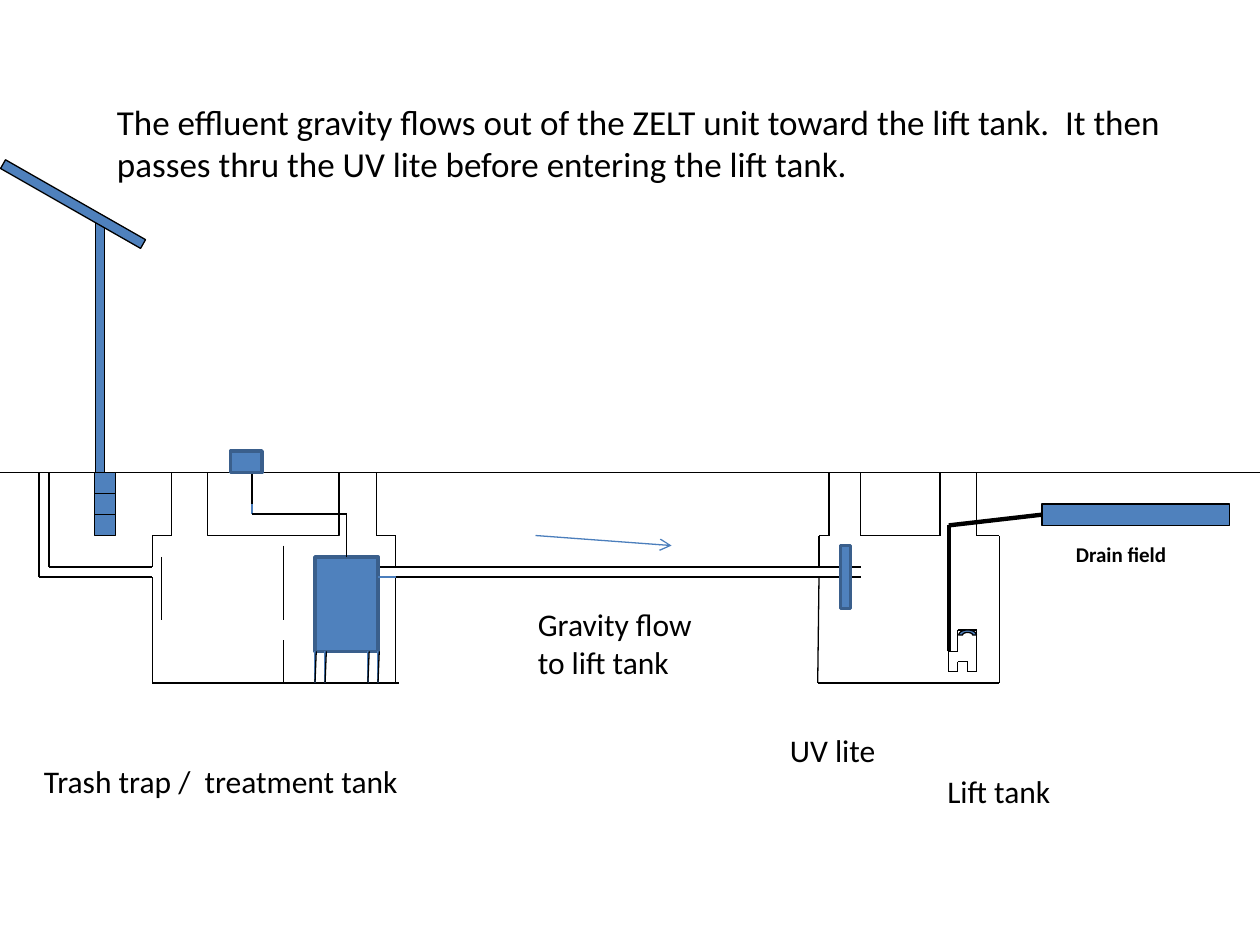
from collections import namedtuple
from dataclasses import dataclass
from itertools import pairwise
from math import cos, pi, sin

from lxml.etree import SubElement
from pptx import Presentation
from pptx.dml.color import RGBColor
from pptx.enum.shapes import MSO_CONNECTOR, MSO_SHAPE
from pptx.enum.text import MSO_AUTO_SIZE
from pptx.oxml.ns import qn
from pptx.util import Inches, Pt

Box = namedtuple("Box", "x y w h")


@dataclass(frozen=True)
class Theme:
    black: RGBColor = RGBColor(0x00, 0x00, 0x00)
    blue: RGBColor = RGBColor(0x4F, 0x81, 0xBD)
    edge: RGBColor = RGBColor(0x3A, 0x5F, 0x8C)
    flow: RGBColor = RGBColor(0x4B, 0x7E, 0xBC)
    font: str = "Calibri"
    title: int = 20
    label: int = 18
    small: int = 12
    thin: float = 0.75
    outline: float = 2
    hose: float = 2.5


T = Theme()
GROUND = 3.75
# Depths below ground shared by both tanks
SHOULDER, PIPE_TOP, PIPE_BOTTOM, FLOOR = 0.5, 0.75, 0.83, 1.67


def add_text(s, box, *lines, size=T.label, bold=False, wrap=True):
    tb = s.shapes.add_textbox(*map(Inches, box))
    tf = tb.text_frame
    tf.word_wrap = wrap
    tf.auto_size = MSO_AUTO_SIZE.SHAPE_TO_FIT_TEXT
    for i, line in enumerate(lines):
        p = tf.paragraphs[0] if i == 0 else tf.add_paragraph()
        r = p.add_run()
        r.text = line
        r.font.name, r.font.size, r.font.bold = T.font, Pt(size), bold
        r.font.color.rgb = T.black


def style(sp, fill, line, width):
    sp.shadow.inherit = False
    if fill is None:
        sp.fill.background()
    else:
        sp.fill.solid()
        sp.fill.fore_color.rgb = fill
    sp.line.color.rgb = line
    sp.line.width = Pt(width)


def add_rect(s, box, fill=T.blue, line=T.black, width=T.thin):
    sp = s.shapes.add_shape(MSO_SHAPE.RECTANGLE, *map(Inches, box))
    style(sp, fill, line, width)
    return sp


def add_route(s, box, *points, color=T.black, width=T.thin, arrow=False):
    """Join points, given from the box's corner, and return the last connector."""
    for (x1, y1), (x2, y2) in pairwise(points):
        c = s.shapes.add_connector(
            MSO_CONNECTOR.STRAIGHT, Inches(box.x + x1), Inches(box.y + y1),
            Inches(box.x + x2), Inches(box.y + y2))
        c.line.color.rgb = color
        c.line.width = Pt(width)
        SubElement(c._element.spPr, qn("a:effectLst"))
    if arrow:
        SubElement(c._element.spPr.find(qn("a:ln")), qn("a:tailEnd"), type="arrow")
    return c


def solar_panel(s, box):
    x, y, w, h = box
    for i in range(3):
        add_rect(s, Box(x + 0.81, GROUND + i * 0.5 / 3, 0.17, 0.5 / 3))
    add_rect(s, Box(x + 0.82, y + 0.17, 0.07, h - 0.17))
    add_rect(s, Box(x, y, w, 0.08)).rotation = 29.7


def treatment_tank(s, box):
    x, y, w, h = box
    wall, right = 0.9, 2.83
    add_route(s, box, (0.08, 0), (0.08, PIPE_TOP), (wall, PIPE_TOP))
    add_route(s, box, (0, 0), (0, PIPE_BOTTOM), (wall, PIPE_BOTTOM), (wall, h), (w, h))
    for riser, side in ((1.05, wall), (2.68, right)):
        add_route(s, box, (riser, 0), (riser, SHOULDER), (side, SHOULDER), (side, PIPE_TOP))
    add_route(s, box, (right, PIPE_BOTTOM), (right, h))
    add_rect(s, Box(x + 1.34, y, 1.04, SHOULDER), fill=None)
    for bx, top, bottom in ((0.97, 0.67, 1.17), (1.94, 0.58, 1.17), (1.94, 1.33, h)):
        add_route(s, box, (bx, top), (bx, bottom))
    treatment_unit(s, Box(x + 2.19, y + 0.67, 0.5, 0.75))
    add_route(s, box, (right, PIPE_BOTTOM), (2.69, PIPE_BOTTOM), color=T.flow)


def treatment_unit(s, box):
    """Treatment unit on four legs, with its blower and air line."""
    unit = add_rect(s, box, line=T.edge, width=T.outline)
    floor = box.h + 0.25
    for leg in (0, 0.08, 0.42, 0.5):
        add_route(s, box, (leg, floor), (leg, box.h), color=T.flow)
        add_route(s, box, (leg + 0.01, box.h), (leg, floor))
    mid, ground, bend = box.w / 2, -0.67, -0.34
    add_route(s, box, (-0.5, ground), (-0.5, bend), color=T.flow)
    add_route(s, box, (-0.5, ground), (-0.5, bend - 0.08))
    air = add_route(s, box, (-0.5, bend), (mid, bend), (mid, 0))
    air.end_connect(unit, 0)
    add_rect(s, Box(box.x - 0.67, box.y - 0.84, 0.25, 0.17), line=T.edge, width=T.outline)


def gravity_pipe(s, box):
    for depth in (0, box.h):
        add_route(s, box, (0, depth), (box.w, depth))
    add_route(s, box, (1.25, -0.25), (2.33, -0.17), color=T.flow, arrow=True)


def lift_tank(s, box):
    x, y, w, h = box
    add_route(s, box, (0.09, 0), (0.09, SHOULDER), (0.01, SHOULDER), (0.01, PIPE_TOP))
    add_route(s, box, (0.01, PIPE_BOTTOM), (0, h), (w, h), (w, SHOULDER),
              (1.26, SHOULDER), (1.26, 0))
    add_route(s, box, (0.34, 0), (0.34, SHOULDER), (0.97, SHOULDER), (0.97, 0))
    for depth in (PIPE_TOP, PIPE_BOTTOM):
        add_route(s, box, (0.01, depth), (0.34, depth))
    pump(s, Box(x + 1.04, y + 1.25, 0.22, 0.33))
    add_rect(s, Box(x + 0.18, y + 0.58, 0.08, 0.5), line=T.edge, width=T.outline)


def pump(s, box):
    w, h = box.w, box.h
    neck, foot = 0.07, 0.25
    add_route(s, box, (neck, 0), (w, 0), (w, h), (0.15, h), (0.15, foot), (neck, foot),
              (neck, h), (0, h), (0, 0.17), (neck, 0.17), (neck, 0))
    cx, base, steps = box.x + 0.15, box.y + 0.04, 12

    def arc(rx, ry):
        return [(Inches(cx - rx * cos(pi * i / steps)), Inches(base - ry * sin(pi * i / steps)))
                for i in range(steps + 1)]

    outer, inner = arc(0.07, 0.04), arc(0.04, 0.02)
    fb = s.shapes.build_freeform(*outer[0])
    fb.add_line_segments(outer[1:] + inner[::-1], close=True)
    style(fb.convert_to_shape(), T.blue, T.black, T.thin)


def drain_field(s, box):
    """Field bed, the hose that feeds it from the pump, and its label."""
    bed = add_rect(s, box)
    hose = add_route(s, box, (-0.74, 1.17), (-0.74, 0.17), (0, box.h / 2), width=T.hose)
    hose.end_connect(bed, 1)
    add_text(s, Box(box.x + 0.17, box.y + 0.25, 1.32, 0.3), "Drain field",
             size=T.small, bold=True)


def labels(s, box):
    x, y = box.x, box.y
    add_text(s, Box(x + 0.83, y + 0.75, 8.83, 0.77),
             "The effluent gravity flows out of the ZELT unit toward the lift tank.  "
             "It then passes thru the UV lite before entering the lift tank.", size=T.title)
    add_text(s, Box(x + 0.25, y + 6, 3.65, 0.4), "Trash trap /  treatment tank")
    add_text(s, Box(x + 4.17, y + 4.75, 1.49, 0.71), "Gravity flow", "to lift tank", wrap=False)
    add_text(s, Box(x + 6.17, y + 5.75, 0.89, 0.4), "UV lite", wrap=False)
    add_text(s, Box(x + 7.42, y + 6.08, 1.04, 0.4), "Lift tank", wrap=False)


def main():
    prs = Presentation()
    prs.slide_width, prs.slide_height = Inches(10), Inches(7.5)
    s = prs.slides.add_slide(prs.slide_layouts[6])
    page = Box(0, 0, 10, 7.5)
    add_route(s, page, (0, GROUND), (page.w, GROUND))
    solar_panel(s, Box(-0.06, 1.58, 1.28, 2.17))
    gravity_pipe(s, Box(3, GROUND + PIPE_TOP, 3.5, PIPE_BOTTOM - PIPE_TOP))
    treatment_tank(s, Box(0.31, GROUND, 2.86, FLOOR))
    lift_tank(s, Box(6.49, GROUND, 1.44, FLOOR))
    drain_field(s, Box(8.27, 4, 1.49, 0.17))
    labels(s, page)
    prs.save("out.pptx")


if __name__ == "__main__":
    main()
